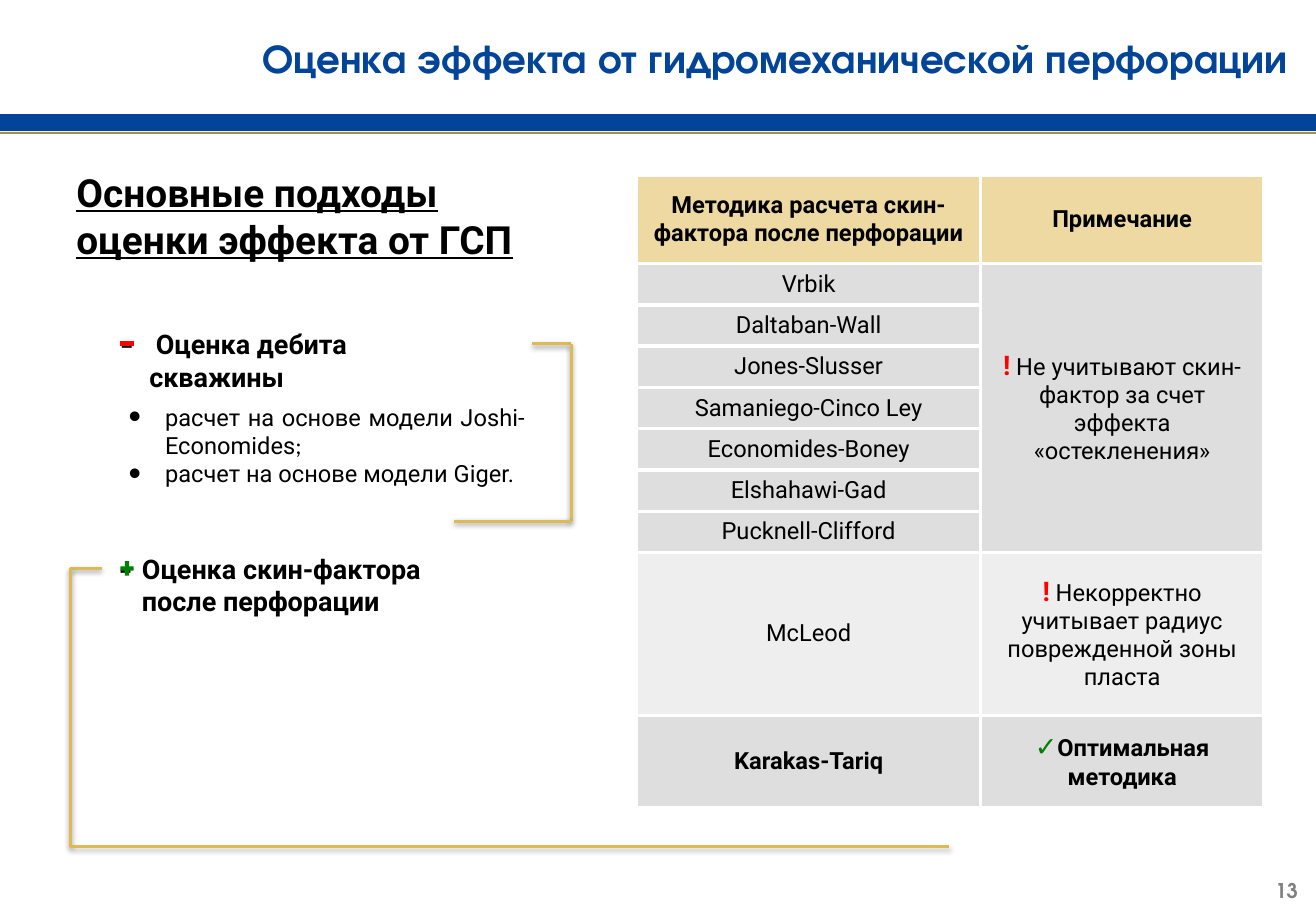
from itertools import pairwise

from lxml import etree
from pptx import Presentation
from pptx.dml.color import RGBColor
from pptx.enum.shapes import MSO_CONNECTOR, MSO_SHAPE
from pptx.enum.text import MSO_ANCHOR, PP_ALIGN
from pptx.oxml import parse_xml
from pptx.oxml.ns import nsdecls, qn
from pptx.util import Inches, Pt

# Content
TITLE = "Оценка эффекта от гидромеханической перфорации"
HEADING = "Основные подходы оценки эффекта от ГСП"
FLOW_RATE = " Оценка дебита скважины"
SKIN_FACTOR = "Оценка скин-фактора после перфорации"
MODELS = [
    [("расчет на основе модели Joshi-Economides", "Roboto"), (";", "Calibri")],
    [("расчет на основе модели Giger.", "Roboto")],
]
PAGE_NUMBER = "13"
HEADER = ["Методика расчета скин-фактора после перфорации", "Примечание"]
# Methods, mark, mark colour, note, fill, bold, row height
GROUPS = [
    (["Vrbik", "Daltaban-Wall", "Jones-Slusser", "Samaniego-Cinco Ley",
      "Economides-Boney", "Elshahawi-Gad", "Pucknell-Clifford"],
     "!", "red", " Не учитывают скин-фактор за счет эффекта «остекленения»",
     "grey", False, 0.34),
    (["McLeod"], "!", "red",
     " Некорректно учитывает радиус поврежденной зоны пласта",
     "pale", False, 1.34),
    (["Karakas-Tariq"], "✓", "green", "Оптимальная методика",
     "grey", True, 0.76),
]
HEADER_HEIGHT = 0.73
COLUMNS = [2.83, 2.33]
RULES = [(1.02, "blue", 11.25), (1.09, "bronze", 2), (1.08, "light", 0.75)]
BRACKETS = [
    [(4.38, 2.83), (4.7, 2.83), (4.7, 4.29), (3.74, 4.29)],
    [(0.84, 4.68), (0.58, 4.68), (0.58, 6.97), (7.81, 6.97)],
]
SIGNS = [
    (MSO_SHAPE.MATH_MINUS, (0.97, 2.74, 0.15, 0.18), "red"),
    (MSO_SHAPE.MATH_PLUS, (0.97, 4.6, 0.15, 0.16), "green"),
]
COLORS = {
    "blue": "024498", "bronze": "A68F49", "light": "F2F2F2", "gold": "DEBA54",
    "sand": "EDD9A1", "grey": "DEDEDE", "pale": "EEEEEE", "white": "FFFFFF",
    "black": "000000", "red": "FF0000", "green": "008000", "number": "808080",
}
BODY_FONT, TITLE_FONT = "Roboto", "TeX Gyre Adventor"

deck = Presentation()
deck.slide_width, deck.slide_height = Inches(10.83), Inches(7.5)
page = deck.slides.add_slide(deck.slide_layouts[5])


def color(name):
    return RGBColor.from_string(COLORS[name])


def style(span, size, tint="black", bold=False, face=BODY_FONT):
    span.font.name, span.font.size, span.font.bold = face, Pt(size), bold
    span.font.color.rgb = color(tint)


def add_spans(para, parts):
    """Add (text, size, tint, bold, face) spans to a paragraph."""
    for text, *look in parts:
        span = para.add_run()
        span.text = text
        style(span, *look)


def add_box(left, top, width, height, anchor=MSO_ANCHOR.TOP):
    box = page.shapes.add_textbox(*map(Inches, (left, top, width, height)))
    box.text_frame.word_wrap = True
    box.text_frame.vertical_anchor = anchor
    return box.text_frame


def add_bullet(para, char, indent):
    props = para._p.get_or_add_pPr()
    props.set("marL", str(Inches(indent)))
    props.set("indent", str(-Inches(indent)))
    etree.SubElement(props, qn("a:buSzPct")).set("val", "150000")
    etree.SubElement(props, qn("a:buFont")).set("typeface", "Arial")
    etree.SubElement(props, qn("a:buChar")).set("char", char)


def add_line(start, end, tint, width, shadow=False):
    line = page.shapes.add_connector(
        MSO_CONNECTOR.STRAIGHT, *map(Inches, (*start, *end)))
    line.line.color.rgb, line.line.width = color(tint), Pt(width)
    effects = etree.SubElement(line._element.spPr, qn("a:effectLst"))
    if shadow:
        effects.append(parse_xml(
            f'<a:outerShdw {nsdecls("a")} blurRad="{Pt(3.1)}" dist="{Pt(1.6)}"'
            ' dir="5400000" rotWithShape="0"><a:srgbClr val="000000">'
            '<a:alpha val="38000"/></a:srgbClr></a:outerShdw>'))


def fill_cell(cell, tint, parts):
    cell.fill.solid()
    cell.fill.fore_color.rgb = color(tint)
    cell.vertical_anchor = MSO_ANCHOR.MIDDLE
    para = cell.text_frame.paragraphs[0]
    para.alignment = PP_ALIGN.CENTER
    add_spans(para, parts)
    for place, side in enumerate("LRTB"):
        cell._tc.tcPr.insert(place, parse_xml(
            f'<a:ln{side} {nsdecls("a")} w="{Pt(2.25)}"><a:solidFill>'
            f'<a:srgbClr val="{COLORS["white"]}"/></a:solidFill></a:ln{side}>'))


# Header rules and title
for y, tint, width in RULES:
    add_line((0, y), (10.83, y), tint, width)
title = page.shapes.title
title.left, title.top = Inches(0.77), Inches(0.19)
title.width, title.height = Inches(9.93), Inches(0.56)
title.text_frame.text = TITLE
title.text_frame.vertical_anchor = MSO_ANCHOR.MIDDLE
title_para = title.text_frame.paragraphs[0]
title_para.alignment = PP_ALIGN.RIGHT
style(title_para.runs[0], 24, "blue", True, TITLE_FONT)

# Table of skin factor methods
heights = [HEADER_HEIGHT]
for methods, *_, height in GROUPS:
    heights += [height] * len(methods)
table = page.shapes.add_table(
    len(heights), len(COLUMNS), Inches(5.24), Inches(1.44),
    Inches(sum(COLUMNS)), Inches(sum(heights))).table
for column, width in zip(table.columns, COLUMNS):
    column.width = Inches(width)
for row, height in zip(table.rows, heights):
    row.height = Inches(height)
for index, text in enumerate(HEADER):
    fill_cell(table.cell(0, index), "sand", [(text, 14, "black", True)])
first = 1
for methods, mark, mark_tint, note, tint, bold, _ in GROUPS:
    for offset, method in enumerate(methods):
        fill_cell(table.cell(first + offset, 0), tint,
                  [(method, 14, "black", bold)])
        note_parts = [(mark, 16, mark_tint, True), (note, 14, "black", bold)]
        fill_cell(table.cell(first + offset, 1), tint,
                  [] if offset else note_parts)
    last = first + len(methods) - 1
    if last > first:
        table.cell(first, 1).merge(table.cell(last, 1))
    first = last + 1

# Approaches on the left
heading = add_box(0.53, 1.34, 4.14, 1.38).paragraphs[0]
add_spans(heading, [(HEADING, 23, "black", True)])
heading.runs[0].font.underline = True
for text, place, indent in [
    (FLOW_RATE, (0.89, 2.65, 2.6, 0.64), 0.24),
    (SKIN_FACTOR, (0.88, 4.5, 3.08, 0.64), 0.19),
]:
    para = add_box(*place).paragraphs[0]
    add_bullet(para, "-", indent)
    add_spans(para, [(text, 16, "black", True)])

models = add_box(0.96, 3.26, 3.46, 0.81, MSO_ANCHOR.MIDDLE)
for index, parts in enumerate(MODELS):
    para = models.add_paragraph() if index else models.paragraphs[0]
    para.alignment = PP_ALIGN.JUSTIFY
    add_bullet(para, "•", 0.3)
    add_spans(para, [(text, 14, "black", False, face) for text, face in parts])

# Brackets and signs
for corners in BRACKETS:
    for start, end in pairwise(corners):
        add_line(start, end, "gold", 1.75, shadow=True)
for kind, place, tint in SIGNS:
    sign = page.shapes.add_shape(kind, *map(Inches, place))
    sign.shadow.inherit = False
    sign.fill.solid()
    sign.fill.fore_color.rgb = color(tint)
    sign.line.fill.background()

# Page number
number = add_box(8.25, 7.13, 2.53, 0.4, MSO_ANCHOR.MIDDLE).paragraphs[0]
number.alignment = PP_ALIGN.RIGHT
add_spans(number, [(PAGE_NUMBER, 12, "number", True, TITLE_FONT)])

deck.save("out.pptx")
